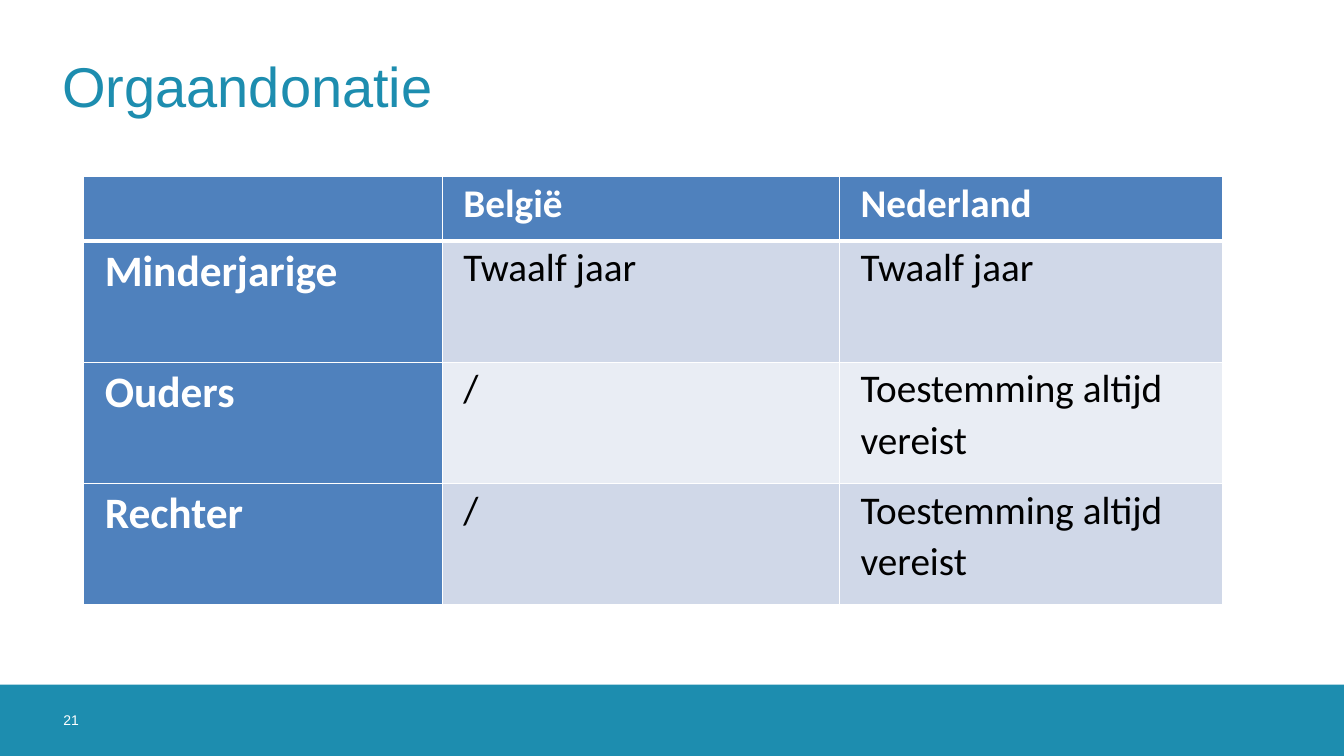
from lxml.etree import SubElement
from pptx import Presentation
from pptx.dml.color import RGBColor
from pptx.enum.shapes import MSO_SHAPE
from pptx.enum.text import MSO_ANCHOR, PP_ALIGN
from pptx.oxml.ns import qn
from pptx.util import Cm, Pt

TEAL = RGBColor(0x1D, 0x8D, 0xAF)
BLUE = RGBColor(0x4F, 0x81, 0xBD)
BAND_DARK = RGBColor(0xD0, 0xD8, 0xE8)
BAND_LIGHT = RGBColor(0xE9, 0xED, 0xF4)
WHITE = RGBColor(0xFF, 0xFF, 0xFF)
BLACK = RGBColor(0x00, 0x00, 0x00)


def add_run(paragraph, text, font_name, size, color, bold=False):
    run = paragraph.add_run()
    run.text = text
    run.font.name = font_name
    run.font.size = Pt(size)
    run.font.color.rgb = color
    run.font.bold = bold


def set_border(cell, side, points):
    line = SubElement(cell._tc.get_or_add_tcPr(), qn(f"a:ln{side}"), w=str(Pt(points)))
    fill = SubElement(line, qn("a:solidFill"))
    SubElement(fill, qn("a:srgbClr"), val=str(WHITE))


presentation = Presentation()
presentation.slide_width = Cm(33.87)
presentation.slide_height = Cm(19.05)
slide = presentation.slides.add_slide(presentation.slide_layouts[5])

# Footer band
band = slide.shapes.add_shape(MSO_SHAPE.RECTANGLE, 0, Cm(17.25), Cm(33.87), Cm(1.8))
band.shadow.inherit = False
band.fill.solid()
band.fill.fore_color.rgb = TEAL
band.line.fill.background()

# Slide number
number_box = slide.shapes.add_textbox(Cm(1.6), Cm(17.93), Cm(0.61), Cm(0.46))
number_frame = number_box.text_frame
number_frame.margin_left = number_frame.margin_right = 0
number_frame.margin_top = number_frame.margin_bottom = 0
add_run(number_frame.paragraphs[0], "21", "Arial", 10, WHITE)

# Title
title = slide.shapes.title
title.left, title.top, title.width, title.height = Cm(1.57), Cm(1.24), Cm(30.73), Cm(1.75)
title_frame = title.text_frame
title_frame.margin_left = title_frame.margin_right = 0
title_frame.margin_top = title_frame.margin_bottom = 0
title_frame.vertical_anchor = MSO_ANCHOR.BOTTOM
title_frame.paragraphs[0].alignment = PP_ALIGN.LEFT
add_run(title_frame.paragraphs[0], "Orgaandonatie", "Arial", 40, TEAL)

# Comparison table
rows = [
    ["", "België", "Nederland"],
    ["Minderjarige", "Twaalf jaar", "Twaalf jaar"],
    ["Ouders", "/", "Toestemming altijd vereist"],
    ["Rechter", "/", "Toestemming altijd vereist"],
]
column_widths = [9.04, 10.01, 9.65]
row_heights = [1.63, 3.05, 3.05, 3.05]

table = slide.shapes.add_table(
    len(rows), len(column_widths), Cm(2.11), Cm(4.45),
    Cm(sum(column_widths)), Cm(sum(row_heights)),
).table
for column, width in zip(table.columns, column_widths):
    column.width = Cm(width)
for row, height in zip(table.rows, row_heights):
    row.height = Cm(height)

for row_index, texts in enumerate(rows):
    for column_index, text in enumerate(texts):
        cell = table.cell(row_index, column_index)
        is_heading = row_index == 0 or column_index == 0
        cell.margin_left = cell.margin_right = Cm(0.53)
        cell.margin_top = cell.margin_bottom = 0

        # White grid, with a thicker rule under the header row
        set_border(cell, "L", 1)
        set_border(cell, "R", 1)
        set_border(cell, "T", 3 if row_index == 1 else 1)
        set_border(cell, "B", 3 if row_index == 0 else 1)

        cell.fill.solid()
        if is_heading:
            cell.fill.fore_color.rgb = BLUE
        else:
            cell.fill.fore_color.rgb = BAND_DARK if row_index % 2 else BAND_LIGHT

        if text:
            paragraph = cell.text_frame.paragraphs[0]
            paragraph.line_spacing = 1.07
            paragraph.space_after = Pt(8)
            size = 31 if column_index == 0 else 28
            add_run(paragraph, text, "Calibri", size, WHITE if is_heading else BLACK, is_heading)

presentation.save("out.pptx")
